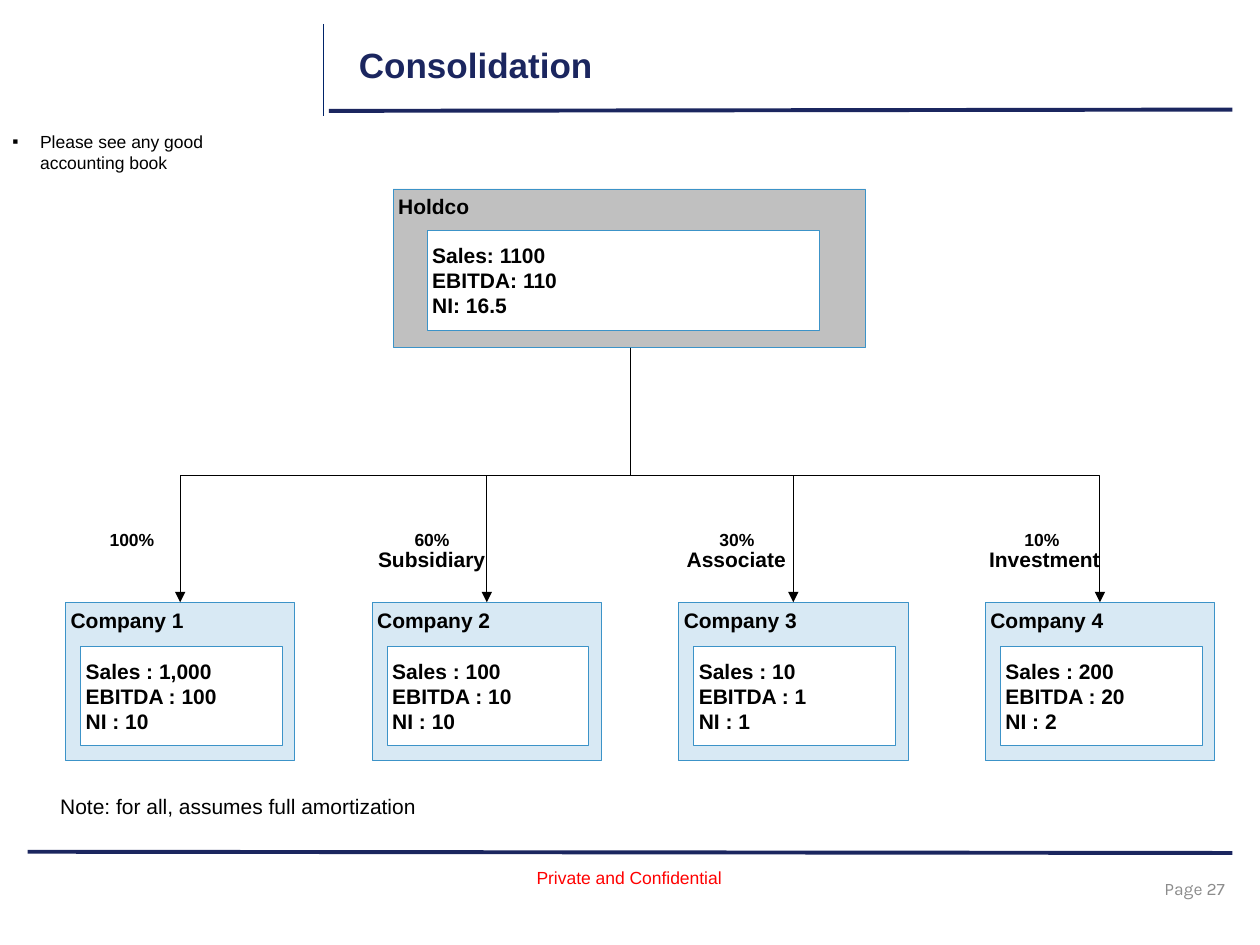
from lxml.etree import SubElement
from pptx import Presentation
from pptx.dml.color import RGBColor
from pptx.enum.shapes import MSO_CONNECTOR, MSO_SHAPE
from pptx.enum.text import MSO_ANCHOR, PP_ALIGN
from pptx.oxml.ns import qn
from pptx.util import Inches, Pt

NAVY = RGBColor(0x1B, 0x26, 0x5F)
DARK_BLUE = RGBColor(0x00, 0x23, 0x68)
BORDER_BLUE = RGBColor(0x3C, 0x93, 0xC8)
PALE_BLUE = RGBColor(0xD8, 0xE9, 0xF4)
SILVER = RGBColor(0xC0, 0xC0, 0xC0)
GRAY = RGBColor(0x8C, 0x8C, 0x8C)
RED = RGBColor(0xFF, 0x00, 0x00)
BLACK = RGBColor(0x00, 0x00, 0x00)
WHITE = RGBColor(0xFF, 0xFF, 0xFF)

presentation = Presentation()
presentation.slide_width = Inches(10)
presentation.slide_height = Inches(7.5)
slide = presentation.slides.add_slide(presentation.slide_layouts[6])


def add_text(text, left, top, width, height, size=12, bold=True, color=BLACK, fill=None,
             border=None, anchor=MSO_ANCHOR.TOP, inset=0.04, wrap=True, font="Arial"):
    area = Inches(left), Inches(top), Inches(width), Inches(height)
    if fill is None:
        shape = slide.shapes.add_textbox(*area)
    else:
        shape = slide.shapes.add_shape(MSO_SHAPE.RECTANGLE, *area)
        shape.shadow.inherit = False
        shape.fill.solid()
        shape.fill.fore_color.rgb = fill
        if border is None:
            shape.line.fill.background()
        else:
            shape.line.color.rgb = border
            shape.line.width = Pt(0.5)
    frame = shape.text_frame
    frame.text = text
    frame.word_wrap = wrap
    frame.vertical_anchor = anchor
    frame.margin_left = frame.margin_right = Inches(inset)
    frame.margin_top = frame.margin_bottom = Inches(min(inset, 0.05))
    for paragraph in frame.paragraphs:
        paragraph.alignment = PP_ALIGN.LEFT
        for run in paragraph.runs:
            run.font.name = font
            run.font.size = Pt(size)
            run.font.bold = bold
            run.font.color.rgb = color
    return shape


def add_line(kind, x1, y1, x2, y2, color, width):
    line = slide.shapes.add_connector(kind, Inches(x1), Inches(y1), Inches(x2), Inches(y2))
    line.line.color.rgb = color
    line.line.width = Pt(width)
    SubElement(line._element.spPr, qn("a:effectLst"))
    return line


for x1, y1, x2, y2, color, width in [
    (0.22, 6.76, 9.78, 6.77, NAVY, 2.25),
    (2.61, 0.88, 9.78, 0.87, NAVY, 2.25),
    (2.57, 0.19, 2.57, 0.86, DARK_BLUE, 0.75),
    (2.57, 0.25, 2.57, 0.92, DARK_BLUE, 0.75),
]:
    add_line(MSO_CONNECTOR.STRAIGHT, x1, y1, x2, y2, color, width)

page_number = add_text("Page 27", 7.49, 6.85, 2.33, 0.4, 10, False, GRAY,
                       anchor=MSO_ANCHOR.MIDDLE, inset=0.1, font="Karla")
page_number.text_frame.paragraphs[0].alignment = PP_ALIGN.RIGHT
add_text("Private and Confidential", 4.16, 6.83, 1.68, 0.27, 10, False, RED,
         inset=0.1, wrap=False)
add_text("Consolidation", 2.75, 0.3, 6.75, 0.53, 20, True, NAVY, inset=0.1)

advice = add_text("Please see any good accounting book", 0, 0.99, 2.25, 5.38, 10, False,
                  inset=0.1)
properties = advice.text_frame.paragraphs[0]._p.get_or_add_pPr()
properties.set("marL", str(Inches(0.22)))
properties.set("indent", str(-Inches(0.22)))
SubElement(properties, qn("a:buFont"), typeface="Arial")
SubElement(properties, qn("a:buChar"), char="▪")

holdco = add_text("Holdco", 3.12, 1.5, 3.75, 1.26, fill=SILVER, border=BORDER_BLUE)
add_text("Sales: 1100\nEBITDA: 110\nNI: 16.5", 3.39, 1.83, 3.11, 0.79, fill=WHITE,
         border=BORDER_BLUE, anchor=MSO_ANCHOR.MIDDLE)

companies = [
    ("100%", None, None, None, "1,000", "100", "10"),
    ("60%", "Subsidiary", 2.96, WHITE, "100", "10", "10"),
    ("30%", "Associate", 5.41, None, "10", "1", "1"),
    ("10%", "Investment", 7.81, None, "200", "20", "2"),
]
start_x, start_y, end_y = 5, 2.76, 4.78
drop = end_y - start_y
for index, (share, relation, relation_left, relation_fill, sales, ebitda, income) in enumerate(companies):
    left = 0.52 + index * 7.3 / 3
    if relation:
        add_text(relation, relation_left, 4.08, 1.09, 0.71, fill=relation_fill,
                 anchor=MSO_ANCHOR.MIDDLE)
    add_text(share, 0.83 + index * 2.42, 4.16, 0.51, 0.25, 10)
    company = add_text(f"Company {index + 1}", left, end_y, 1.82, 1.26, fill=PALE_BLUE,
                       border=BORDER_BLUE)
    add_text(f"Sales : {sales}\nEBITDA : {ebitda}\nNI : {income}", left + 0.12, 5.13, 1.6, 0.79,
             fill=WHITE, border=BORDER_BLUE, anchor=MSO_ANCHOR.MIDDLE)

    end_x = left + 0.91
    span = abs(end_x - start_x)
    branch = add_line(MSO_CONNECTOR.ELBOW, start_x, start_y, end_x, end_y, BLACK, 0.5)
    branch.begin_connect(holdco, 2)
    branch.end_connect(company, 0)
    branch.left = Inches((start_x + end_x - drop) / 2)
    branch.top = Inches((start_y + end_y - span) / 2)
    branch.width, branch.height = Inches(drop), Inches(span)
    goes_right = end_x > start_x
    transform = branch._element.spPr.find(qn("a:xfrm"))
    transform.set("rot", "16200000" if goes_right else "5400000")
    transform.set("flipH", "1" if goes_right else "0")
    transform.set("flipV", "0")
    SubElement(branch.line._get_or_add_ln(), qn("a:tailEnd"), type="triangle")

add_text("Note: for all, assumes full amortization", 0.38, 6.25, 3.06, 0.3, 12, False,
         inset=0.1, wrap=False)

presentation.save("out.pptx")
